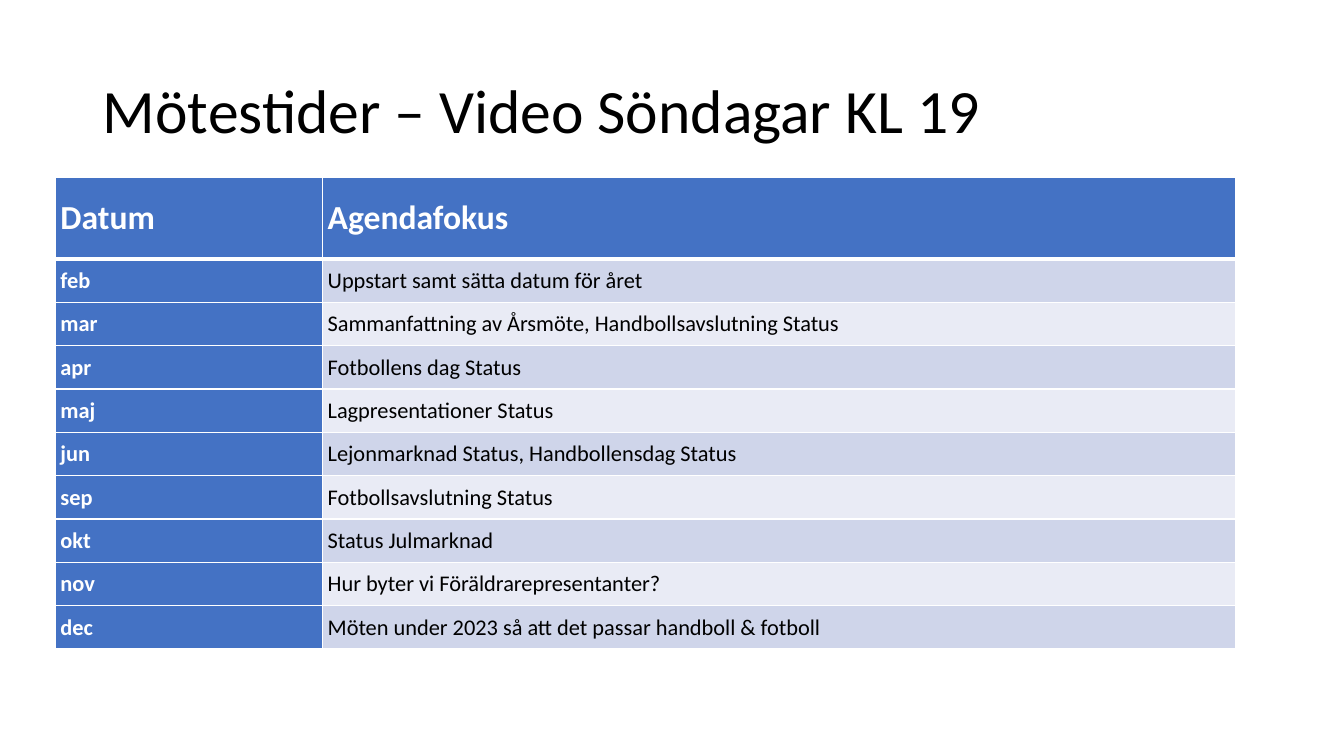
import pptx
import pptx.util
import pptx.dml.color
import pptx.enum.text
import pptx.oxml
import pptx.oxml.ns

TITLE = "Mötestider – Video Söndagar KL 19"
HEADER = ("Datum", "Agendafokus")
MEETINGS = [
    ("feb", "Uppstart samt sätta datum för året"),
    ("mar", "Sammanfattning av Årsmöte, Handbollsavslutning Status"),
    ("apr", "Fotbollens dag Status"),
    ("maj", "Lagpresentationer Status"),
    ("jun", "Lejonmarknad Status, Handbollensdag Status"),
    ("sep", "Fotbollsavslutning Status"),
    ("okt", "Status Julmarknad"),
    ("nov", "Hur byter vi Föräldrarepresentanter?"),
    ("dec", "Möten under 2023 så att det passar handboll & fotboll"),
]
COLORS = {"accent": "4472C4", "odd": "CFD5EA", "even": "E9EBF5",
          "white": "FFFFFF", "black": "000000"}
FONT = "Calibri"
COLUMNS = (2.65, 9.05)
HEADER_ROW, BODY_ROW = 0.81, 0.43
TABLE_LEFT, TABLE_TOP = 0.55, 1.76

Inches, Pt = pptx.util.Inches, pptx.util.Pt
MIDDLE = pptx.enum.text.MSO_ANCHOR.MIDDLE


def rgb(name):
    return pptx.dml.color.RGBColor.from_string(COLORS[name])


def apply(obj, values):
    for key, value in values.items():
        setattr(obj, key, value)


def write(tf, text, color, size, bold=False):
    p = tf.paragraphs[0]
    p.alignment = pptx.enum.text.PP_ALIGN.LEFT
    r = p.add_run()
    r.text = text
    apply(r.font, {"name": FONT, "size": Pt(size), "bold": bold})
    r.font.color.rgb = rgb(color)
    return p


def add_borders(cell, widths):
    tcPr = cell._tc.get_or_add_tcPr()
    for side, width in widths.items():
        tcPr.append(pptx.oxml.parse_xml(
            f'<a:ln{side} {pptx.oxml.ns.nsdecls("a")} w="{Pt(width)}"><a:solidFill>'
            f'<a:srgbClr val="{COLORS["white"]}"/></a:solidFill></a:ln{side}>'))


def add_title(s):
    sp = s.shapes.title
    apply(sp, {"left": Inches(0.92), "top": Inches(0.4),
               "width": Inches(11.5), "height": Inches(1.45)})
    tf = sp.text_frame
    apply(tf, {"vertical_anchor": MIDDLE, "word_wrap": True,
               "auto_size": pptx.enum.text.MSO_AUTO_SIZE.NONE})
    write(tf, TITLE, "black", 44).line_spacing = 0.9


def add_schedule(s):
    rows = [HEADER, *MEETINGS]
    heights = [HEADER_ROW] + [BODY_ROW] * len(MEETINGS)
    table = s.shapes.add_table(
        len(rows), len(COLUMNS), Inches(TABLE_LEFT), Inches(TABLE_TOP),
        Inches(sum(COLUMNS)), Inches(sum(heights))).table
    table.first_col = True
    for column, width in zip(table.columns, COLUMNS):
        column.width = Inches(width)
    for i, (texts, height) in enumerate(zip(rows, heights)):
        table.rows[i].height = Inches(height)
        for j, text in enumerate(texts):
            cell = table.cell(i, j)
            heading = i == 0 or j == 0
            band = "odd" if i % 2 else "even"
            apply(cell, {"vertical_anchor": MIDDLE,
                         "margin_left": Inches(0.05), "margin_right": Inches(0.05),
                         "margin_top": 0, "margin_bottom": 0})
            add_borders(cell, {"L": 1, "R": 1, "T": 3 if i == 1 else 1,
                               "B": 3 if i == 0 else 1})
            cell.fill.solid()
            cell.fill.fore_color.rgb = rgb("accent" if heading else band)
            write(cell.text_frame, text, "white" if heading else "black",
                  24 if i == 0 else 16, heading)


def main():
    prs = pptx.Presentation()
    apply(prs, {"slide_width": Inches(13.33), "slide_height": Inches(7.5)})
    s = prs.slides.add_slide(prs.slide_layouts[5])
    add_title(s)
    add_schedule(s)
    prs.save("out.pptx")


if __name__ == "__main__":
    main()
